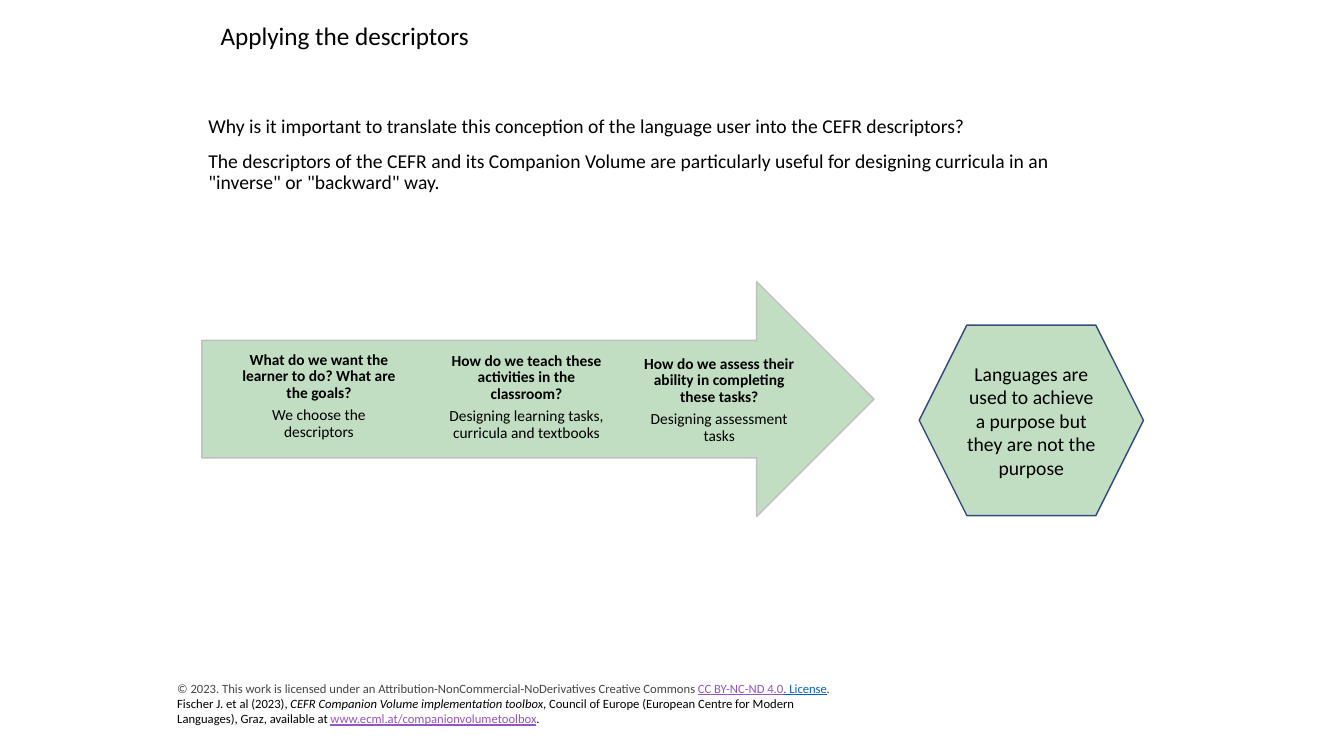
from pptx import Presentation
from pptx.dml.color import RGBColor
from pptx.enum.shapes import MSO_SHAPE
from pptx.enum.text import MSO_ANCHOR, PP_ALIGN
from pptx.util import Pt

ARROW, HEXAGON = MSO_SHAPE.RIGHT_ARROW, MSO_SHAPE.HEXAGON
TOP, MIDDLE = MSO_ANCHOR.TOP, MSO_ANCHOR.MIDDLE
LEFT, CENTER = PP_ALIGN.LEFT, PP_ALIGN.CENTER

# Content: each paragraph is a list of (text, format) runs
TITLE = [[("Applying the descriptors", {})]]
INTRO = [
    [("Why is it important to translate this conception of the language user "
      "into the CEFR descriptors?", {})],
    [("The descriptors of the CEFR and its Companion Volume are particularly "
      "useful for designing curricula in an \"inverse\" or \"backward\" way.", {})],
]
# Left, top, question, answer
STEPS = [
    (169.9, 241.2, "What do we want the learner to do? What are the goals?",
     "We choose the descriptors"),
    (318.2, 241.9, "How do we teach these activities in the classroom?",
     "Designing learning tasks, curricula and textbooks"),
    (455.8, 244.1, "How do we assess their ability in completing these tasks?",
     "Designing assessment tasks"),
]
GOAL = [[("Languages are used to achieve a purpose but they are not the purpose", {})]]
CREDIT = [
    [("© 2023. This work is licensed under an Attribution-NonCommercial-NoDerivatives "
      "Creative Commons ", {"color": "gray"}),
     ("CC BY-NC-ND 4.0", {"color": "visited", "under": True}),
     (". License", {"color": "link", "under": True}),
     (".", {"color": "gray", "italic": True})],
    [("Fischer J. et al (2023), ", {}),
     ("CEFR Companion Volume implementation toolbox", {"italic": True}),
     (", Council of Europe (European Centre for Modern Languages), Graz, "
      "available at ", {}),
     ("www.ecml.at/companionvolumetoolbox", {"color": "visited", "under": True}),
     (".", {})],
]

THEME = {
    "font": "Calibri",
    "color": {"text": "000000", "gray": "464646", "visited": "9454C3",
              "link": "0563C1", "green": "C1DDC2", "edge": "BFBFBF",
              "navy": "374B7F"},
    "size": {"title": 18, "body": 14, "step": 11, "credit": 9},
}


def tint(name):
    return RGBColor.from_string(THEME["color"][name])


def write(shape, paras, size, align=LEFT, anchor=MIDDLE, spacing=1.0,
          before=0, after=0, inset=(7.2, 3.6, 7.2, 3.6)):
    frame = shape.text_frame
    frame.word_wrap = True
    frame.vertical_anchor = anchor
    (frame.margin_left, frame.margin_top,
     frame.margin_right, frame.margin_bottom) = map(Pt, inset)
    for i, runs in enumerate(paras):
        para = frame.add_paragraph() if i else frame.paragraphs[0]
        para.alignment = align
        para.line_spacing = spacing
        para.space_before = Pt(before if i else 0)
        para.space_after = Pt(after)
        for text, look in runs:
            run = para.add_run()
            run.text = text
            font = run.font
            font.name = THEME["font"]
            font.size = Pt(THEME["size"][size])
            font.color.rgb = tint(look.get("color", "text"))
            font.bold = look.get("bold", False)
            font.italic = look.get("italic", False)
            font.underline = look.get("under", False)


deck = Presentation()
deck.slide_width, deck.slide_height = Pt(960), Pt(540)
slide = deck.slides.add_slide(deck.slide_layouts[6])


def label(box, paras, size, **look):
    write(slide.shapes.add_textbox(*map(Pt, box)), paras, size, **look)


def block(kind, box, edge):
    shape = slide.shapes.add_shape(kind, *map(Pt, box))
    shape.shadow.inherit = False
    shape.fill.solid()
    shape.fill.fore_color.rgb = tint("green")
    shape.line.color.rgb = tint(edge)
    shape.line.width = Pt(1)
    return shape


# Licence and citation
label((119.5, 482.4, 493.2, 40.3), CREDIT, "credit")

# Introduction
label((141.8, 53.3, 648, 356.4), INTRO, "body", anchor=TOP, spacing=0.9,
      before=10, inset=(7.2, 30, 7.2, 3.6))

# Arrow with its three steps
block(ARROW, (144.2, 201.2, 480.2, 167.8), "edge")
for left, top, ask, answer in STEPS:
    label((left, top, 115.9, 83.5), [[(ask, {"bold": True})], [(answer, {})]],
          "step", align=CENTER, spacing=0.9, after=3.85, inset=(0, 8.6, 0, 8.6))

# Title
label((150.5, 12.2, 480.2, 28.8), TITLE, "title", spacing=0.9)

# Purpose hexagon
write(block(HEXAGON, (656.6, 232.2, 160.2, 136.1), "navy"), GOAL, "body",
      align=CENTER)

deck.save("out.pptx")
